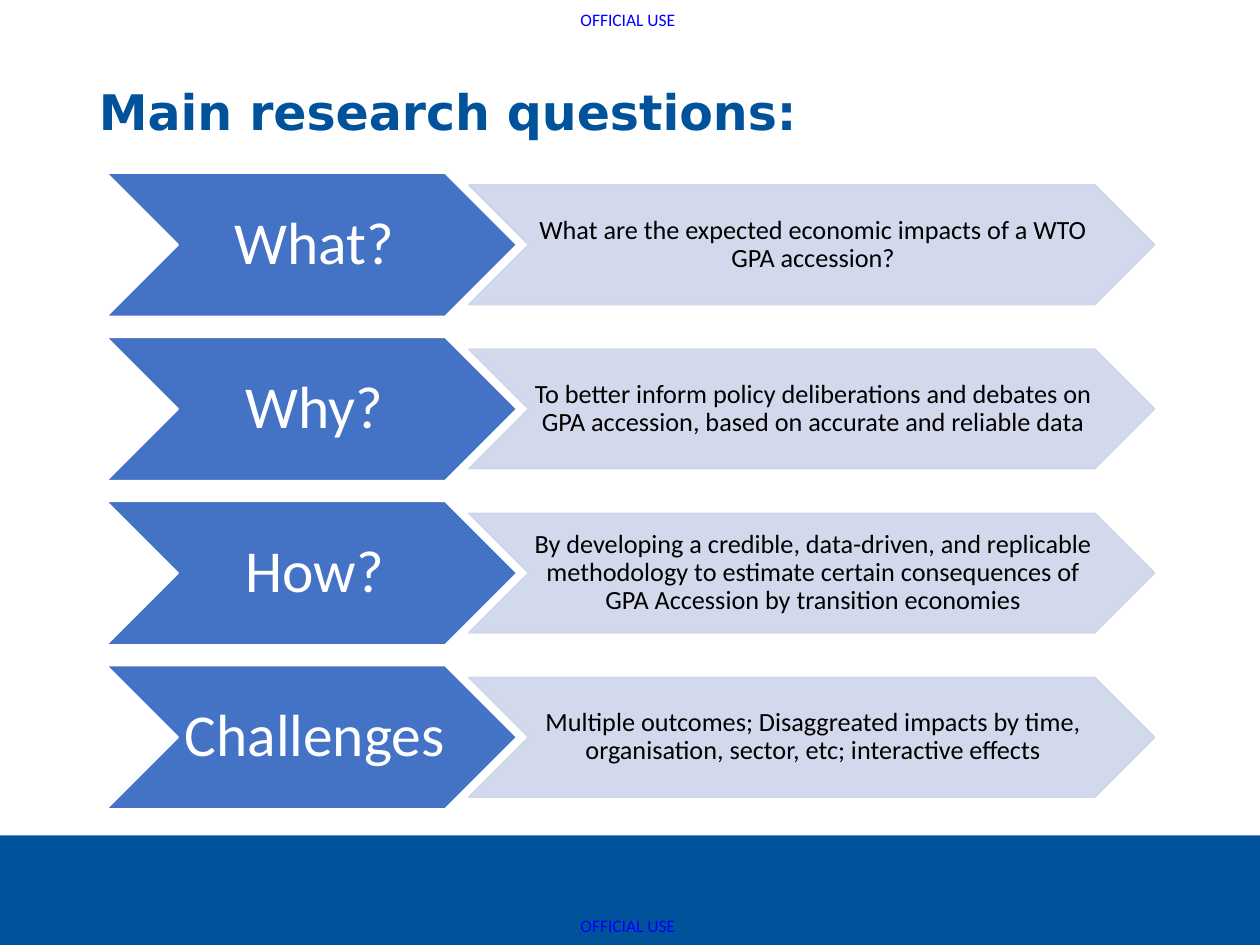
import pptx
import pptx.util
import pptx.dml.color
import pptx.enum.shapes
import pptx.enum.text
import pptx.oxml
import pptx.oxml.ns
import lxml.etree

Pt = pptx.util.Pt
RGBColor = pptx.dml.color.RGBColor
SHAPE = pptx.enum.shapes.MSO_SHAPE
ALIGN = pptx.enum.text.PP_ALIGN
ANCHOR = pptx.enum.text.MSO_ANCHOR

NAVY = RGBColor(0x00, 0x53, 0x9B)
BLUE = RGBColor(0x44, 0x72, 0xC4)
PALE = RGBColor(0xCF, 0xD5, 0xEA)
MARK = RGBColor(0x00, 0x00, 0xFF)
WHITE = RGBColor(0xFF, 0xFF, 0xFF)
BLACK = RGBColor(0x00, 0x00, 0x00)

QUESTIONS = [
    ("What?", "What are the expected economic impacts of a WTO GPA accession?"),
    ("Why?", "To better inform policy deliberations and debates on GPA accession, "
             "based on accurate and reliable data"),
    ("How?", "By developing a credible, data-driven, and replicable methodology to "
             "estimate certain consequences of GPA Accession by transition economies"),
    ("Challenges", "Multiple outcomes; Disaggreated impacts by time, organisation, "
                   "sector, etc; interactive effects"),
]


def add_text(s, text, x, y, w, h, size, color, font="Calibri", bold=False, align=ALIGN.LEFT,
             anchor=ANCHOR.TOP, spacing=1.0, insets=(0, 0, 0, 0), wrap=True):
    """Add a text box holding one formatted paragraph."""
    tf = s.shapes.add_textbox(Pt(x), Pt(y), Pt(w), Pt(h)).text_frame
    tf.word_wrap = wrap
    tf.vertical_anchor = anchor
    tf.margin_left, tf.margin_top, tf.margin_right, tf.margin_bottom = map(Pt, insets)
    p = tf.paragraphs[0]
    p.alignment = align
    p.line_spacing = spacing
    r = p.add_run()
    r.text = text
    r.font.name = font
    r.font.size = Pt(size)
    r.font.bold = bold
    r.font.color.rgb = color


def set_alpha(fill_parent, percent):
    """Set the opacity of every solid colour under an element."""
    for clr in fill_parent.iter(pptx.oxml.ns.qn("a:srgbClr")):
        alpha = lxml.etree.SubElement(clr, pptx.oxml.ns.qn("a:alpha"))
        alpha.set("val", str(percent * 1000))


def add_block(s, kind, x, y, w, h, fill, line=None):
    """Add a filled preset shape with an optional outline."""
    sp = s.shapes.add_shape(kind, Pt(x), Pt(y), Pt(w), Pt(h))
    sp.shadow.inherit = False
    sp.fill.solid()
    sp.fill.fore_color.rgb = fill
    if line is None:
        sp.line.fill.background()
    else:
        sp.line.color.rgb = line
        sp.line.width = Pt(1)
    return sp


def add_chevron(s, text, x, y, w, h, fill, line, size, color, insets):
    """Add a chevron with its text centred between notch and point."""
    sp = add_block(s, SHAPE.CHEVRON, x, y, w, h, fill, line)
    add_text(s, text, x + h / 2, y, w - h, h, size, color, align=ALIGN.CENTER,
             anchor=ANCHOR.MIDDLE, spacing=0.9, insets=insets)
    return sp


def add_question(s, label, detail, x, y, w, h):
    """Add one row: a strong label chevron and a pale detail chevron."""
    label_w, detail_w, detail_h = 234.6, 391.8, 68.2
    add_chevron(s, label, x, y, label_w, h, BLUE, WHITE, 34, WHITE, (3.4, 1.7, 0, 1.7))
    sp = add_chevron(s, detail, x + w - detail_w, y + (h - detail_h) / 2, detail_w, detail_h,
                     PALE, PALE, 15, BLACK, (1.5, 0.75, 0, 0.75))
    set_alpha(sp.element.spPr, 90)


def add_questions(s, x, y, w, h):
    """Spread the question rows evenly down the box."""
    row_h = 82
    pitch = (h - row_h) / (len(QUESTIONS) - 1)
    for i, (label, detail) in enumerate(QUESTIONS):
        add_question(s, label, detail, x, y + i * pitch, w, row_h)


def add_frame(s, x, y, w, h):
    """Add the footer band and the markings at the top and bottom."""
    band_h = 62.6
    add_block(s, SHAPE.RECTANGLE, x, y + h - band_h, w, band_h, NAVY)
    mark_w, mark_h, edge = 56.6, 12.2, 5
    for mark_y in (y + edge, y + h - edge - mark_h):
        add_text(s, "OFFICIAL USE", x + (w - mark_w) / 2, mark_y, mark_w, mark_h, 10, MARK,
                 wrap=False)


def add_title(s, x, y, w, h):
    """Add the slide heading."""
    add_text(s, "Main research questions:", x, y, w, h, 28, NAVY, font="DejaVu Sans",
             bold=True, spacing=0.9, insets=(7.2, 3.6, 7.2, 3.6))


def main():
    """Build and save the slide."""
    prs = pptx.Presentation()
    prs.slide_width, prs.slide_height = Pt(720), Pt(540)
    s = prs.slides.add_slide(prs.slide_layouts[6])
    add_frame(s, 0, 0, 720, 540)
    add_title(s, 49.5, 46.8, 621, 104.4)
    add_questions(s, 60.8, 98.9, 599, 363.4)
    prs.save("out.pptx")


if __name__ == "__main__":
    main()
